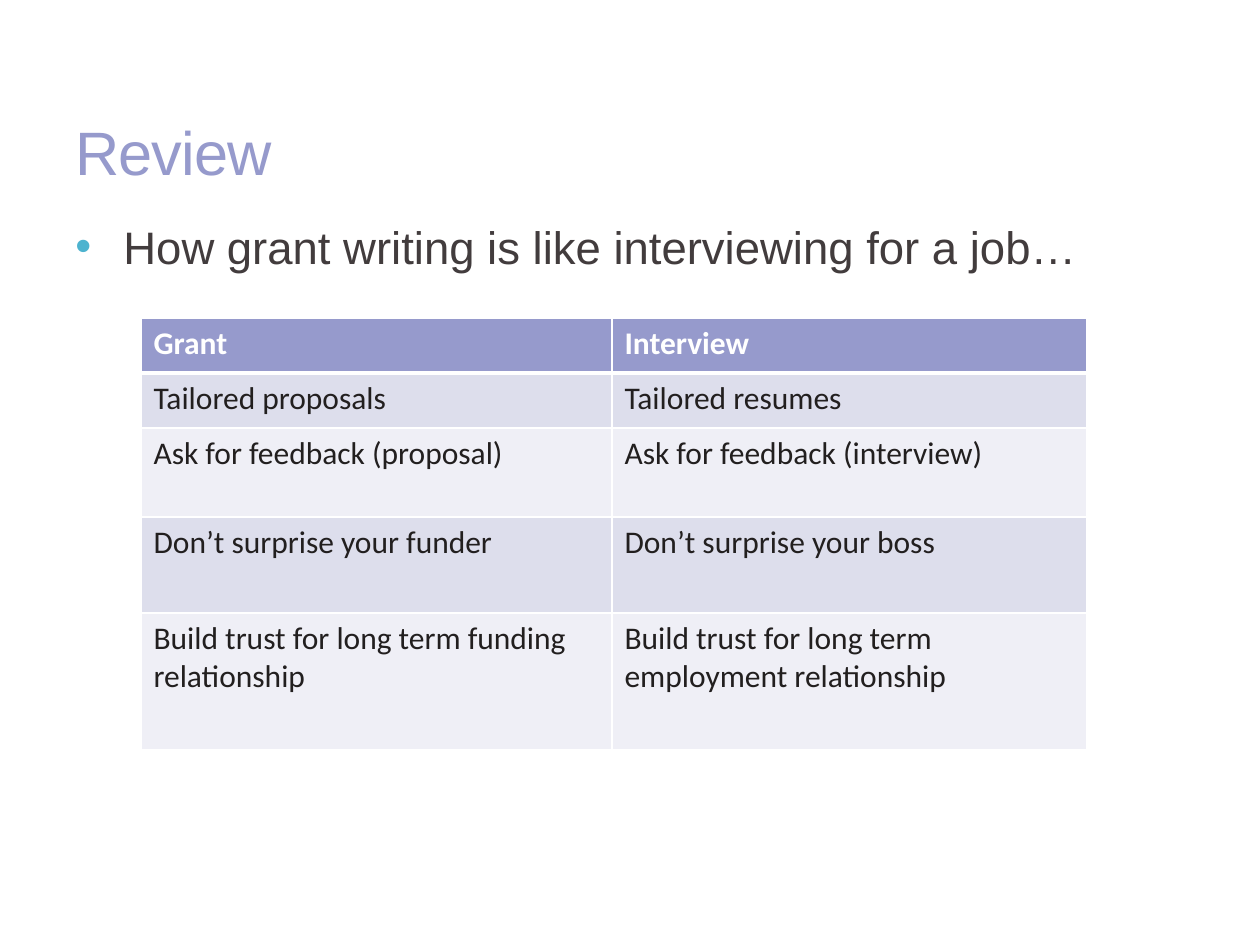
from lxml.etree import SubElement
from pptx import Presentation
from pptx.dml.color import RGBColor
from pptx.enum.text import MSO_ANCHOR
from pptx.oxml.ns import qn
from pptx.util import Pt

SCALE = 914400 // 126  # EMU in one px
LILAC, WHITE, INK = "969ACC", "FFFFFF", "221F1F"
BANDS = ["DDDEEC", "EFEFF6"]
HEAD = {"name": "Calibri", "size": Pt(18), "bold": True}
CELL = {**HEAD, "bold": False}
ROWS = [
    ("Grant", "Interview"),
    ("Tailored proposals", "Tailored resumes"),
    ("Ask for feedback (proposal)", "Ask for feedback (interview)"),
    ("Don’t surprise your funder", "Don’t surprise your boss"),
    ("Build trust for long term funding relationship",
     "Build trust for long term employment relationship"),
]
WIDTHS = [471, 475]
HEIGHTS = [55, 55, 89, 96, 137]


def px(n):
    return int(n * SCALE)


def color(code):
    return RGBColor.from_string(code)


def style(font, form, code):
    for key, value in form.items():
        setattr(font, key, value)
    font.color.rgb = color(code)


def add_text(slide, box, text, size, code, **frame):
    shape = slide.shapes.add_textbox(*map(px, box))
    body = shape.text_frame
    for key, value in {"word_wrap": True, **frame}.items():
        setattr(body, key, value)
    para = body.paragraphs[0]
    run = para.add_run()
    run.text = text
    style(run.font, {"name": "Arial", "size": Pt(size)}, code)
    return para, run


def add_title(slide, box):
    _, run = add_text(slide, box, "Review", 35, LILAC,
                      vertical_anchor=MSO_ANCHOR.BOTTOM)
    run.font._element.set("spc", "-50")


def add_point(slide, box):
    para, _ = add_text(slide, box,
                       "How grant writing is like interviewing for a job…",
                       26, "423C3D", margin_top=px(12))
    # Bullet with hanging indent
    props = para._p.get_or_add_pPr()
    props.set("marL", str(px(48)))
    props.set("indent", str(px(-48)))
    tint = SubElement(props, qn("a:buClr"))
    SubElement(tint, qn("a:srgbClr"), val="4DB3CF")
    SubElement(props, qn("a:buFont"), typeface="Arial")
    SubElement(props, qn("a:buChar"), char="•")


def add_edges(cell, widths):
    props = cell._tc.get_or_add_tcPr()
    for n, (side, width) in enumerate(widths.items()):
        line = props.makeelement(qn("a:ln" + side), {"w": str(Pt(width))})
        fill = SubElement(line, qn("a:solidFill"))
        SubElement(fill, qn("a:srgbClr"), val=WHITE)
        props.insert(n, line)  # edges come before the fill


def add_grid(slide, left, top):
    box = (left, top, sum(WIDTHS), sum(HEIGHTS))
    grid = slide.shapes.add_table(len(ROWS), len(WIDTHS), *map(px, box)).table
    for col, width in zip(grid.columns, WIDTHS):
        col.width = px(width)
    for r, (row, height) in enumerate(zip(ROWS, HEIGHTS)):
        grid.rows[r].height = px(height)
        for c, text in enumerate(row):
            cell = grid.cell(r, c)
            cell.text = text
            cell.fill.solid()
            cell.fill.fore_color.rgb = color(BANDS[(r - 1) % 2] if r else LILAC)
            style(cell.text_frame.paragraphs[0].runs[0].font,
                  CELL if r else HEAD, INK if r else WHITE)
            # Thick rule between the header and the first row
            add_edges(cell, {"L": 1, "R": 1, "T": 3 if r == 1 else 1,
                             "B": 1 if r else 3})


def main():
    deck = Presentation()
    deck.slide_width, deck.slide_height = px(1260), px(945)
    slide = deck.slides.add_slide(deck.slide_layouts[6])
    add_title(slide, (63, 47, 1134, 147))
    add_point(slide, (63, 207, 1134, 566))
    add_grid(slide, 141, 318)
    deck.save("out.pptx")


if __name__ == "__main__":
    main()
